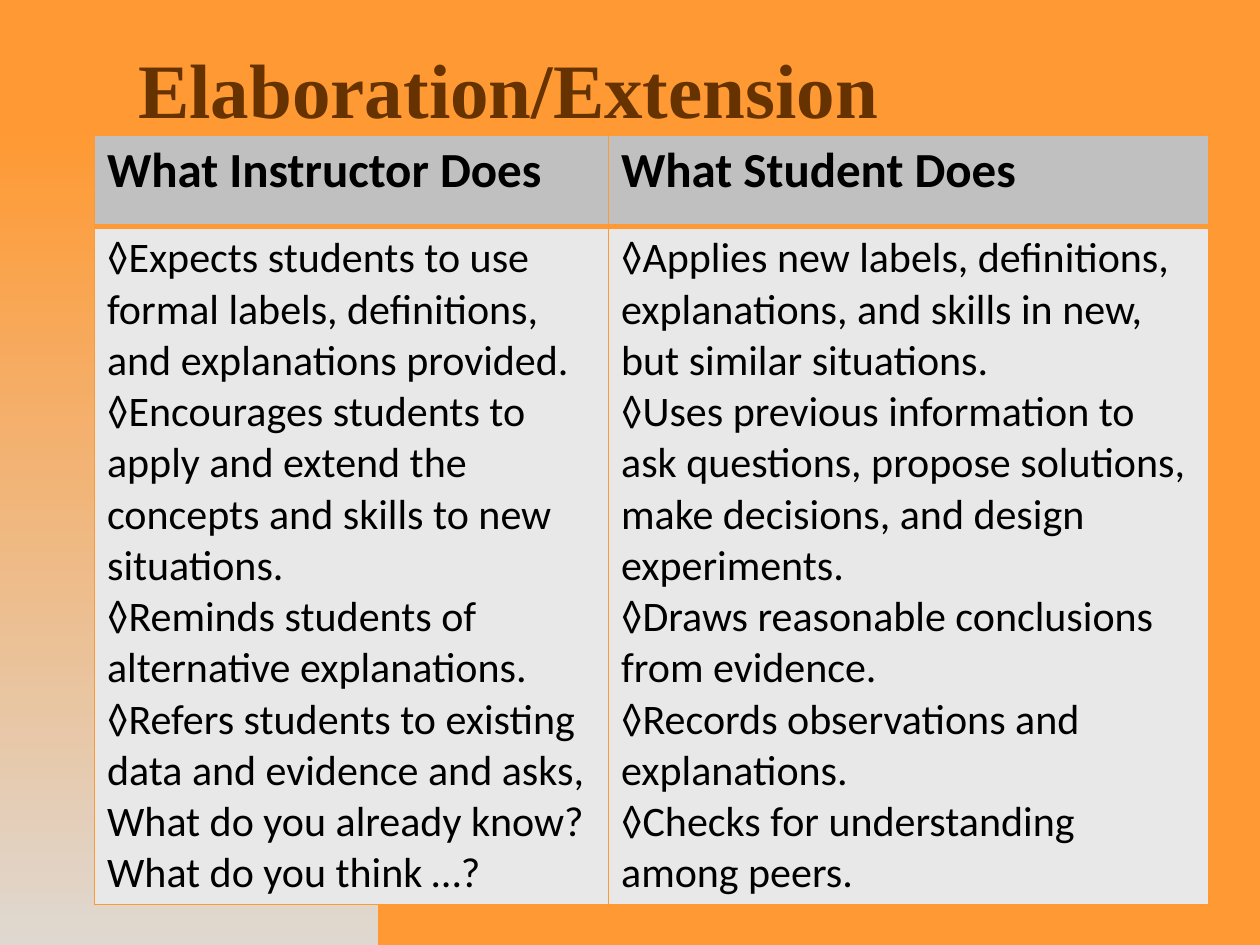
from dataclasses import dataclass

from lxml import etree
from pptx import Presentation
from pptx import util as u
from pptx.dml.color import RGBColor
from pptx.enum import text
from pptx.oxml.ns import qn

WIDTH, HEIGHT = 10, 7.5


@dataclass(frozen=True)
class Theme:
    """Colours, fonts and type sizes of the slide."""
    back: str = "FF9933"
    fade: str = "DDDDDD"
    header: str = "C0C0C0"
    body: str = "E8E8E8"
    title_font: dict = None
    header_font: dict = None
    body_font: dict = None


THEME = Theme(
    title_font={"name": "Times New Roman", "size": u.Pt(44), "bold": True, "color": "663300"},
    header_font={"name": "Calibri", "size": u.Pt(28), "bold": True, "color": "000000"},
    body_font={"name": "Calibri", "size": u.Pt(24), "bold": False, "color": "000000"},
)

INSTRUCTOR = [
    "◊Expects students to use formal labels, definitions, and explanations provided.",
    "◊Encourages students to apply and extend the concepts and skills to new situations.",
    "◊Reminds students of alternative explanations.",
    "◊Refers students to existing data and evidence and asks, What do you already know? "
    "What do you think …?",
]
STUDENT = [
    "◊Applies new labels, definitions, explanations, and skills in new, but similar situations.",
    "◊Uses previous information to ask questions, propose solutions, make decisions, "
    "and design experiments.",
    "◊Draws reasonable conclusions from evidence.",
    "◊Records observations and explanations.",
    "◊Checks for understanding among peers.",
]


def rgb(value):
    """Turn a hex string into a colour."""
    return RGBColor.from_string(value)


def write(frame, lines, style, **layout):
    """Fill a text frame with one styled paragraph per line."""
    for index, line in enumerate(lines):
        para = frame.paragraphs[0] if index == 0 else frame.add_paragraph()
        for name, value in layout.items():
            setattr(para, name, value)
        span = para.add_run()
        span.text = line
        for name, value in style.items():
            if name == "color":
                span.font.color.rgb = rgb(value)
            else:
                setattr(span.font, name, value)


def add_arc(page, top, width, steps=60):
    """Draw the quarter-round panel that fades towards the foot of the slide."""
    height = HEIGHT - top
    curve = [(0, 0), (0.55 * width, 0), (width, 0.45 * height), (width, height)]
    points = []
    for step in range(steps + 1):
        t = step / steps
        weights = ((1 - t) ** 3, 3 * t * (1 - t) ** 2, 3 * t * t * (1 - t), t ** 3)
        x, y = (sum(w * p[axis] for w, p in zip(weights, curve)) for axis in (0, 1))
        points.append((x, top + y))
    builder = page.shapes.build_freeform(0, top, scale=u.Inches(1))
    builder.add_line_segments(points[1:] + [(0, HEIGHT)], close=True)
    panel = builder.convert_to_shape()
    panel.shadow.inherit = False
    panel.line.fill.background()
    panel.fill.gradient()
    panel.fill.gradient_angle = 270
    for stop, colour in zip(panel.fill.gradient_stops, (THEME.back, THEME.fade)):
        stop.color.rgb = rgb(colour)


def add_title(page, words, left, top, width, height):
    """Add the slide heading."""
    box = page.shapes.add_textbox(*map(u.Inches, (left, top, width, height)))
    frame = box.text_frame
    frame.word_wrap = True
    frame.vertical_anchor = text.MSO_ANCHOR.MIDDLE
    write(frame, [words], THEME.title_font, line_spacing=0.7)


def set_borders(cell, **widths):
    """Draw the cell edges in the background colour, with widths in points."""
    props = cell._tc.get_or_add_tcPr()
    for index, side in enumerate("LRTB"):
        line = etree.Element(qn(f"a:ln{side}"), w=str(u.Pt(widths.get(side, 1))))
        fill = etree.SubElement(line, qn("a:solidFill"))
        etree.SubElement(fill, qn("a:srgbClr"), val=THEME.back)
        props.insert(index, line)


def add_roles(page, left, top, columns, rows):
    """Add the table that sets the two roles side by side."""
    size = map(u.Inches, (left, top, sum(columns), sum(rows)))
    table = page.shapes.add_table(len(rows), len(columns), *size).table
    for column, width in zip(table.columns, columns):
        column.width = u.Inches(width)
    for row, height in zip(table.rows, rows):
        row.height = u.Inches(height)
    bands = [
        ([["What Instructor Does"], ["What Student Does"]], THEME.header, THEME.header_font, {"B": 3}),
        ([INSTRUCTOR, STUDENT], THEME.body, THEME.body_font, {"T": 3}),
    ]
    for row, (entries, colour, style, edges) in zip(table.rows, bands):
        for cell, lines in zip(row.cells, entries):
            cell.fill.solid()
            cell.fill.fore_color.rgb = rgb(colour)
            set_borders(cell, **edges)
            write(cell.text_frame, lines, style)


def main():
    """Build the slide and save it."""
    deck = Presentation()
    deck.slide_width, deck.slide_height = u.Inches(WIDTH), u.Inches(HEIGHT)
    page = deck.slides.add_slide(deck.slide_layouts[6])
    page.background.fill.solid()
    page.background.fill.fore_color.rgb = rgb(THEME.back)
    add_arc(page, top=0.92, width=3.17)
    add_title(page, "Elaboration/Extension", 1, 0.33, 8.67, 0.92)
    add_roles(page, 0.75, 1.07, columns=(4.08, 4.76), rows=(0.73, 5.38))
    deck.save("out.pptx")


if __name__ == "__main__":
    main()
